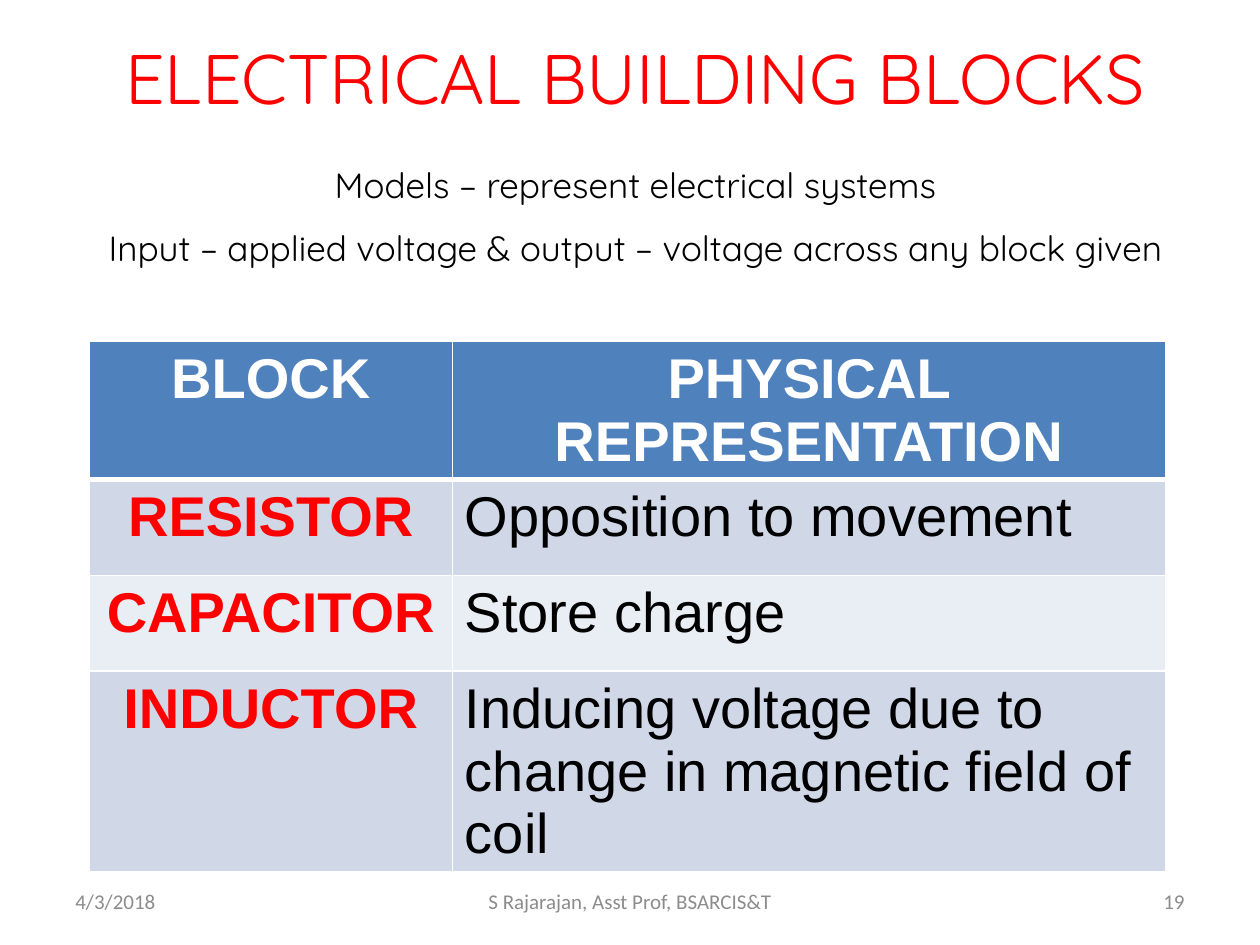
import dataclasses

import lxml.etree
import pptx
import pptx.dml.color
import pptx.enum.text
import pptx.oxml.ns
import pptx.util

Inches = pptx.util.Inches
Align = pptx.enum.text.PP_ALIGN
Anchor = pptx.enum.text.MSO_ANCHOR
Size = pptx.enum.text.MSO_AUTO_SIZE


@dataclasses.dataclass(frozen=True)
class Theme:
    """Hold the colours, fonts and type sizes."""
    red: str = "FF0000"
    black: str = "000000"
    white: str = "FFFFFF"
    grey: str = "8C8C8C"
    head: str = "4F81BD"
    bands: tuple = ("D0D8E8", "E9EDF4")
    round: str = "Quicksand"
    plain: str = "Arial"
    small: str = "Calibri"
    title: int = 40
    lead: int = 20
    cell: int = 32
    foot: int = 12


THEME = Theme()
ROWS = (
    ("BLOCK", "PHYSICAL REPRESENTATION"),
    ("RESISTOR", "Opposition to movement"),
    ("CAPACITOR", "Store charge"),
    ("INDUCTOR", "Inducing voltage due to change in magnetic field of coil"),
)


def rgb(code):
    """Turn a hex code into a colour."""
    return pptx.dml.color.RGBColor.from_string(code)


def style(frame, face, size, color, align, bold=False):
    """Format every paragraph and run of a text frame."""
    for para in frame.paragraphs:
        para.alignment = align
        for run in para.runs:
            run.font.name = face
            run.font.size = pptx.util.Pt(size)
            run.font.bold = bold
            run.font.color.rgb = rgb(color)


def add_title(slide, box):
    """Fill and place the title placeholder."""
    title = slide.shapes.title
    title.left, title.top, title.width, title.height = map(Inches, box)
    frame = title.text_frame
    frame.text = "ELECTRICAL BUILDING BLOCKS"
    frame.word_wrap = True
    frame.auto_size = Size.NONE
    frame.vertical_anchor = Anchor.MIDDLE
    style(frame, THEME.round, THEME.title, THEME.red, Align.CENTER)


def add_lead(slide, box):
    """Add the two opening lines."""
    frame = slide.shapes.add_textbox(*map(Inches, box)).text_frame
    frame.text = (
        "Models – represent electrical systems\n"
        "Input – applied voltage & output – voltage across any block given"
    )
    frame.word_wrap = True
    frame.auto_size = Size.SHAPE_TO_FIT_TEXT
    for para in frame.paragraphs:
        para.line_spacing = 1.5
    style(frame, THEME.round, THEME.lead, THEME.black, Align.CENTER)


def add_edge(cell, side, width):
    """Draw one white border of a cell."""
    name = pptx.oxml.ns.qn
    props = cell._tc.get_or_add_tcPr()
    line = lxml.etree.SubElement(props, name("a:ln" + side))
    line.set("w", str(pptx.util.Pt(width)))
    fill = lxml.etree.SubElement(line, name("a:solidFill"))
    lxml.etree.SubElement(fill, name("a:srgbClr")).set("val", THEME.white)


def add_grid(slide, box):
    """Add the table of blocks with banded rows."""
    shape = slide.shapes.add_table(len(ROWS), 2, *map(Inches, box))
    table = shape.table
    first = 2.88
    for col, width in zip(table.columns, (first, box[2] - first)):
        col.width = Inches(width)
    for row, height in zip(table.rows, (0.76, 0.76, 0.76, 1.39)):
        row.height = Inches(height)
    for r, words in enumerate(ROWS):
        for c, text in enumerate(words):
            cell = table.cell(r, c)
            cell.text = text
            head, name = r == 0, c == 0
            for side in "LRTB":
                thick = (r, side) in ((0, "B"), (1, "T"))
                add_edge(cell, side, 3 if thick else 1)
            cell.fill.solid()
            cell.fill.fore_color.rgb = rgb(THEME.head if head else THEME.bands[(r - 1) % 2])
            color = THEME.white if head else THEME.red if name else THEME.black
            align = Align.CENTER if head or name else Align.LEFT
            style(cell.text_frame, THEME.plain, THEME.cell, color, align, head or name)


def add_foot(slide, box):
    """Add the date, author and page number along the bottom."""
    left, top, width, height = box
    side, mid = 2.33, 3.17
    parts = (
        ("4/3/2018", left, side, Align.LEFT),
        ("S Rajarajan, Asst Prof, BSARCIS&T", left + (width - mid) / 2, mid, Align.CENTER),
        ("19", left + width - side, side, Align.RIGHT),
    )
    for text, x, wide, align in parts:
        frame = slide.shapes.add_textbox(*map(Inches, (x, top, wide, height))).text_frame
        frame.text = text
        frame.word_wrap = True
        frame.vertical_anchor = Anchor.MIDDLE
        style(frame, THEME.small, THEME.foot, THEME.grey, align)


def main():
    """Build the slide and save it."""
    deck = pptx.Presentation()
    deck.slide_width, deck.slide_height = Inches(10), Inches(7.5)
    slide = deck.slides.add_slide(deck.slide_layouts[5])
    add_title(slide, (-0.5, 0.26, 11.08, 0.7))
    add_grid(slide, (0.71, 2.71, 8.54, 3.67))
    add_lead(slide, (0.46, 1.08, 9.17, 1.05))
    add_foot(slide, (0.5, 6.95, 9, 0.4))
    deck.save("out.pptx")


if __name__ == "__main__":
    main()
